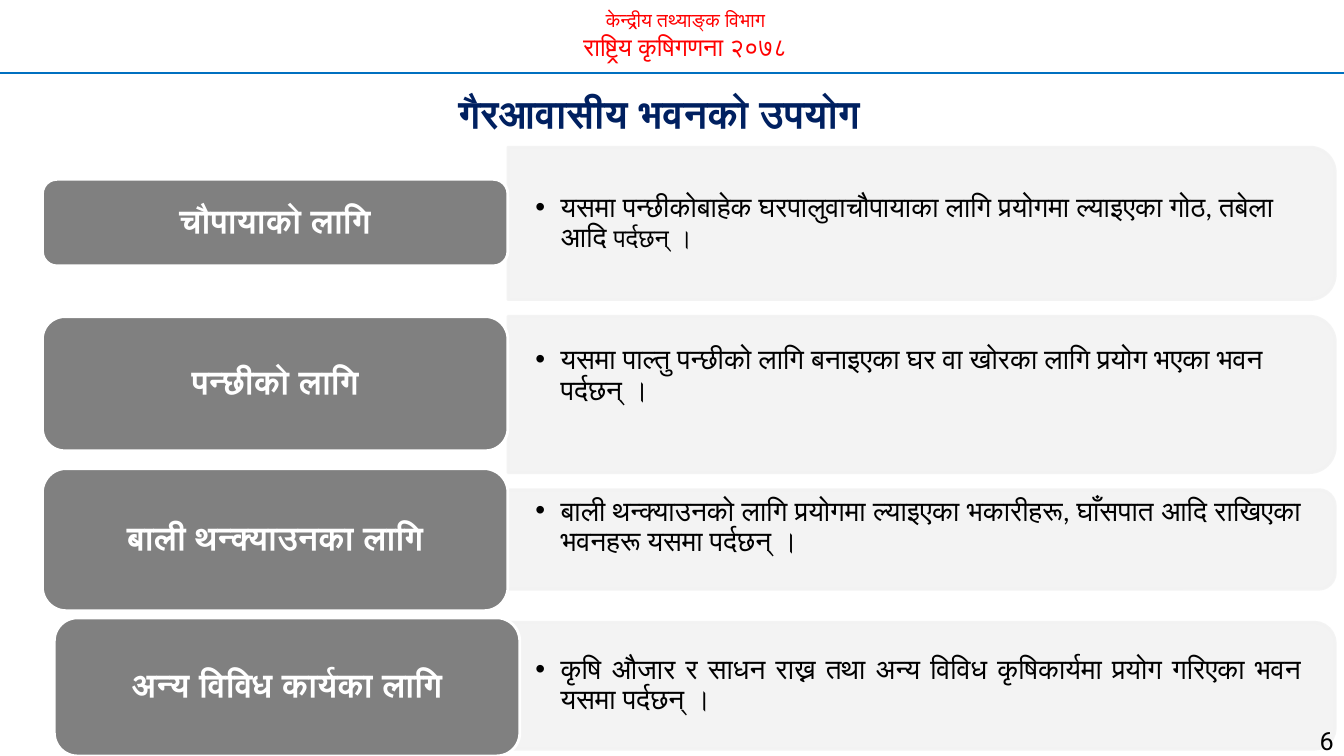
from lxml.etree import SubElement
from pptx import Presentation
from pptx.dml.color import RGBColor
from pptx.enum.shapes import MSO_CONNECTOR, MSO_SHAPE
from pptx.enum.text import MSO_ANCHOR, MSO_AUTO_SIZE, PP_ALIGN
from pptx.oxml.ns import qn
from pptx.util import Cm, Pt


def color(value):
    return RGBColor.from_string(value)


def write(para, text, size, ink, align=PP_ALIGN.CENTER, bold=False, face="Calibri"):
    para.alignment = align
    span = para.add_run()
    span.text = text
    font_values = {"name": face, "size": Pt(size), "bold": bold}
    for name, value in font_values.items():
        setattr(span.font, name, value)
    span.font.color.rgb = color(ink)


deck = Presentation()
deck.slide_width, deck.slide_height = Cm(33.87), Cm(19.05)
page = deck.slides.add_slide(deck.slide_layouts[5])

# Header with its rule
header = page.shapes.add_textbox(Cm(3.18), Cm(0.08), Cm(28.19), Cm(1.63)).text_frame
header.word_wrap = True
write(header.paragraphs[0], "केन्द्रीय तथ्याङ्क विभाग", 14, "FF0000")
write(header.add_paragraph(), "राष्ट्रिय कृषिगणना २०७८", 18, "FF0000")

rule = page.shapes.add_connector(MSO_CONNECTOR.STRAIGHT, 0, Cm(1.85), deck.slide_width, Cm(1.85))
rule.line.color.rgb = color("0070C0")
rule.line.width = Pt(1.5)
SubElement(rule._element.spPr, qn("a:effectLst"))

# Title
title = page.shapes.title
title_values = {"left": 0, "top": Cm(2.11), "width": Cm(33.22), "height": Cm(1.45)}
for name, value in title_values.items():
    setattr(title, name, value)
title.text_frame.auto_size = MSO_AUTO_SIZE.NONE
title.text_frame.vertical_anchor = MSO_ANCHOR.MIDDLE
write(title.text_frame.paragraphs[0], "गैरआवासीय भवनको उपयोग", 28, "002060", bold=True)

# Rows: label, label left, top, height; card top, height;
# text anchor, top inset, alignment, font, runs
MIDDLE, TOP = MSO_ANCHOR.MIDDLE, MSO_ANCHOR.TOP
LEFT, JUSTIFY = PP_ALIGN.LEFT, PP_ALIGN.JUSTIFY
rows = [
    ("चौपायाको लागि", 1.07, 4.52, 2.18, 3.71, 3.84, MIDDLE, 0.36, LEFT, "Calibri",
     [("यसमा पन्छीकोबाहेक घरपालुवाचौपायाका लागि प्रयोगमा ल्याइएका गोठ, तबेला आदि ", 20),
      ("पर्दछन् ।", 18)]),
    ("पन्छीको लागि", 1.07, 7.98, 3.38, 7.97, 3.94, TOP, 0.56, LEFT, "Arial",
     [("यसमा पाल्तु पन्छीको लागि बनाइएका घर वा खोरका लागि प्रयोग भएका भवन पर्दछन् ।", 20)]),
    ("बाली थन्क्याउनका लागि", 1.07, 11.81, 3.58, 12.34, 2.51, TOP, 0, JUSTIFY, "Calibri",
     [("बाली थन्क्याउनको लागि प्रयोगमा ल्याइएका भकारीहरू, घाँसपात आदि राखिएका "
       "भवनहरू यसमा पर्दछन् ।", 20)]),
    ("अन्य विविध कार्यका लागि", 1.37, 15.57, 3.48, 15.68, 3.2, MIDDLE, 0.36, JUSTIFY, "Arial",
     [("कृषि औजार र साधन राख्न तथा अन्य विविध कृषिकार्यमा प्रयोग गरिएका भवन "
       "यसमा पर्दछन् ।", 20)]),
]
card_left, card_width, label_width, margin = 12.8, 20.85, 11.73, 0.18

for (name, left, top, height, card_top, card_height,
     anchor, inset, align, face, runs) in rows:
    # Card: turned a quarter so that its round corners are on the right
    card = page.shapes.add_shape(
        MSO_SHAPE.ROUND_2_SAME_RECTANGLE,
        Cm(card_left + (card_width - card_height) / 2),
        Cm(card_top + (card_height - card_width) / 2),
        Cm(card_height), Cm(card_width))
    card.rotation = 90
    label = page.shapes.add_shape(
        MSO_SHAPE.ROUNDED_RECTANGLE, Cm(left), Cm(top), Cm(label_width), Cm(height))
    for shape, fill, edge in ((card, "F2F2F2", "F2F2F2"), (label, "808080", "FFFFFF")):
        shape.shadow.inherit = False
        shape.fill.solid()
        shape.fill.fore_color.rgb = color(fill)
        shape.line.color.rgb = color(edge)
        shape.line.width = Pt(2)
    for tint in card._element.spPr.iter(qn("a:srgbClr")):
        SubElement(tint, qn("a:alpha"), val="90000")

    # Label text
    label.text_frame.word_wrap = True
    label.text_frame.vertical_anchor = MIDDLE
    label_para = label.text_frame.paragraphs[0]
    label_para.line_spacing = 0.9
    write(label_para, name, 24, "FFFFFF", bold=True)

    # Bulleted description
    box = page.shapes.add_textbox(
        Cm(card_left), Cm(card_top + margin),
        Cm(card_width - margin), Cm(card_height - 2 * margin)).text_frame
    frame_values = {"word_wrap": True, "vertical_anchor": anchor,
                    "margin_left": Cm(0.69), "margin_right": Cm(0.69),
                    "margin_top": Cm(inset), "margin_bottom": Cm(0.36)}
    for key, value in frame_values.items():
        setattr(box, key, value)
    para = box.paragraphs[0]
    para.line_spacing = 0.9
    settings = para._p.get_or_add_pPr()
    settings.set("marL", str(Cm(0.64)))
    settings.set("indent", str(-Cm(0.64)))
    SubElement(settings, qn("a:buFont"), typeface="Arial")
    SubElement(settings, qn("a:buChar"), char="•")
    for text, size in runs:
        write(para, text, size, "000000", align, face=face)

# Page number
number = page.shapes.add_textbox(Cm(31.24), Cm(17.78), Cm(2.62), Cm(1.07)).text_frame
number.word_wrap = True
number.paragraphs[0].line_spacing = 1.5
write(number.paragraphs[0], "6", 18, "000000", PP_ALIGN.RIGHT, face="Roboto")

deck.save("out.pptx")
